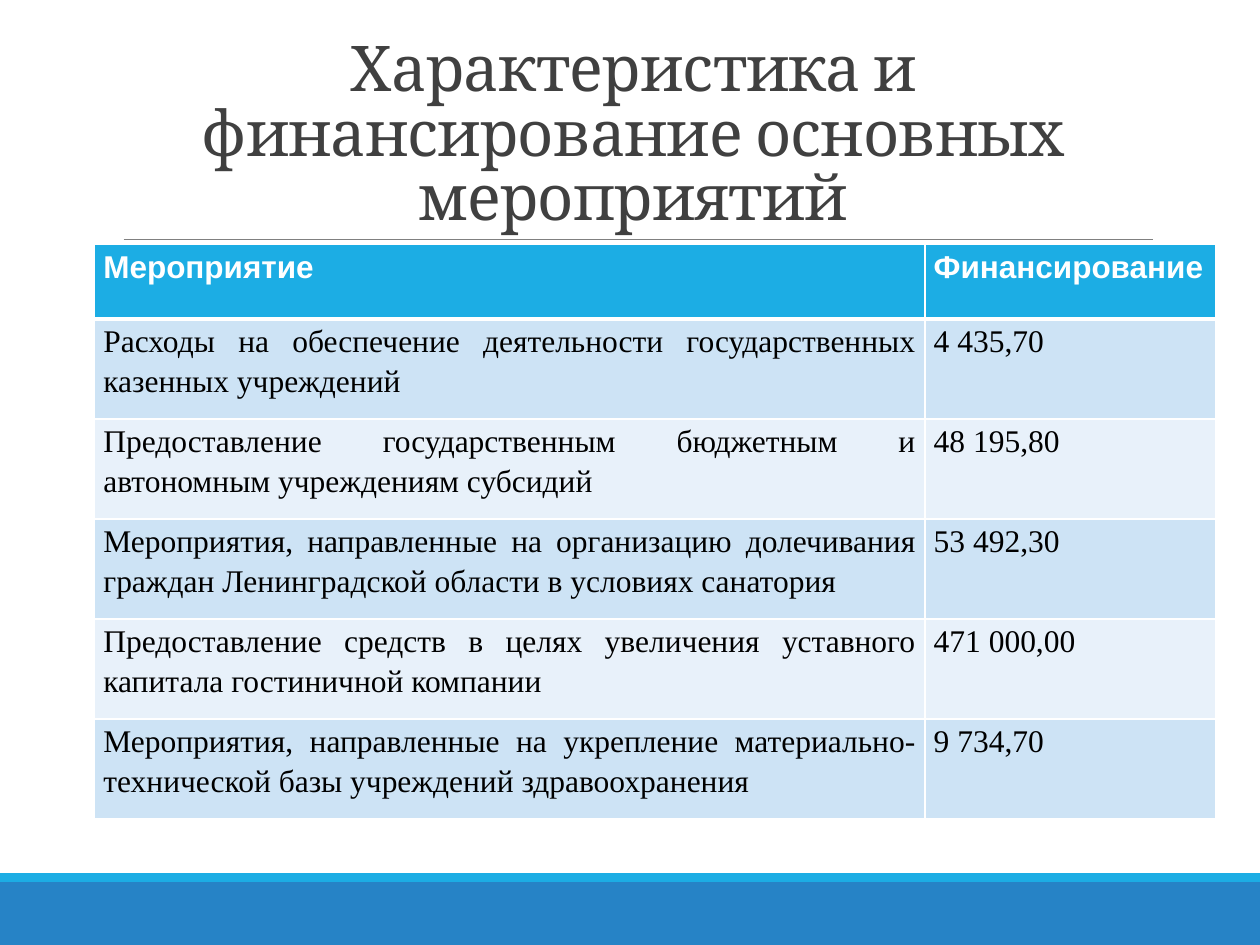
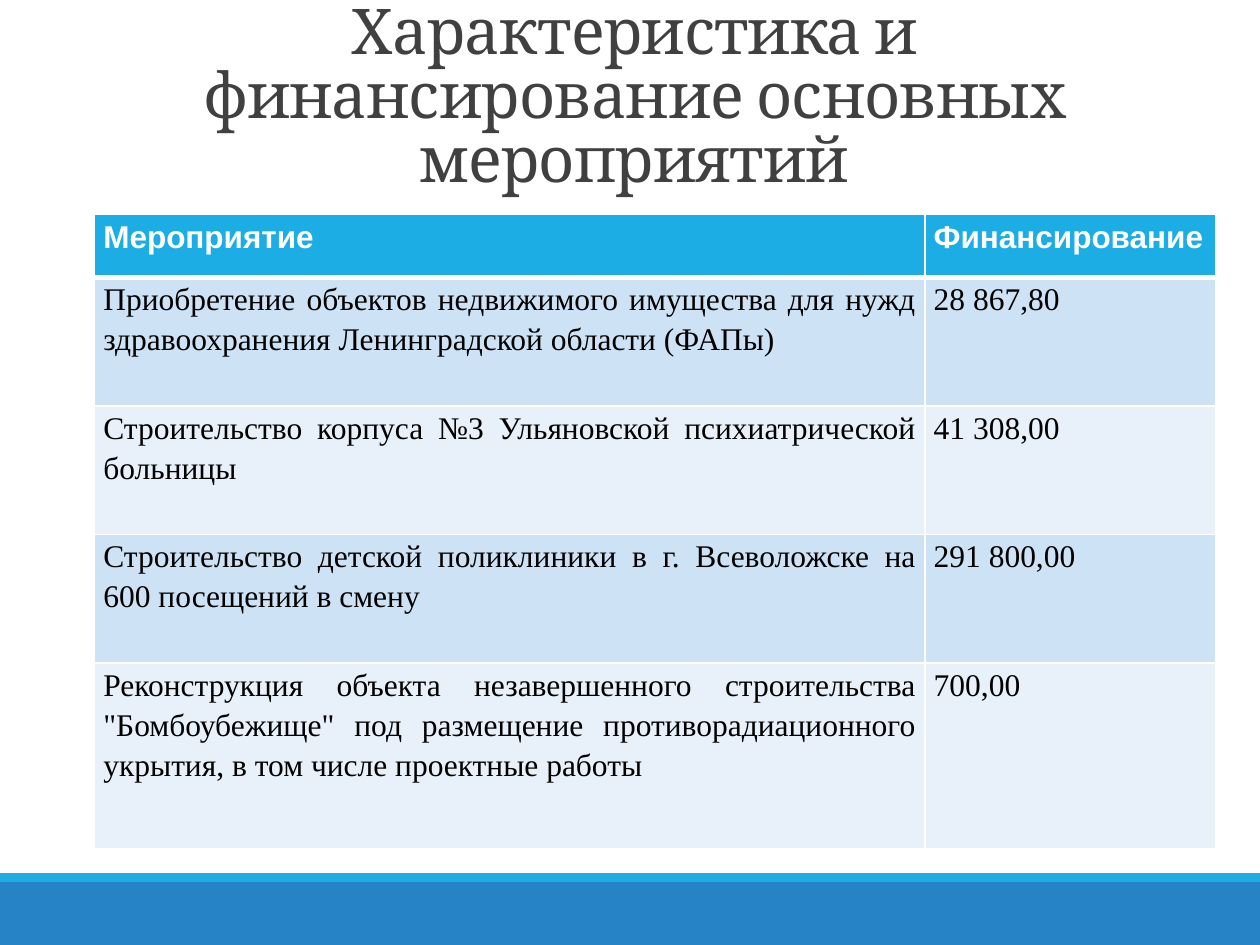
"""Build two slides with tables of main measures and their funding."""
import pptx
import pptx.dml.color
import pptx.enum.shapes
import pptx.enum.text
import pptx.oxml.ns
import pptx.util
from lxml import etree

Pt = pptx.util.Pt
qn = pptx.oxml.ns.qn
ALIGN = pptx.enum.text.PP_ALIGN

TITLE = "Характеристика и финансирование основных мероприятий"
HEADER = ("Мероприятие", "Финансирование")
SLIDES = [
    {
        "title_box": (64.8, 22.3, 594, 114.5),
        "table_top": 139.7,
        "row_heights": [42.5] + [57.2] * 5,
        "measures": [
            ("Расходы на обеспечение деятельности государственных казенных учреждений", "4 435,70"),
            ("Предоставление государственным бюджетным и автономным учреждениям субсидий", "48 195,80"),
            ("Мероприятия, направленные на организацию долечивания граждан "
             "Ленинградской области в условиях санатория", "53 492,30"),
            ("Предоставление средств в целях увеличения уставного капитала "
             "гостиничной компании", "471 000,00"),
            ("Мероприятия, направленные на укрепление материально-технической "
             "базы учреждений здравоохранения", "9 734,70"),
        ],
    },
    {
        "title_box": (65.5, 43.2, 594, 72),
        "table_top": 122.4,
        "row_heights": [36.1] + [73.5] * 3 + [106],
        "measures": [
            ("Приобретение объектов недвижимого имущества для нужд "
             "здравоохранения Ленинградской области (ФАПы)", "28 867,80"),
            ("Строительство корпуса №3 Ульяновской психиатрической больницы", "41 308,00"),
            ("Строительство детской поликлиники в г. Всеволожске на 600 посещений в смену", "291 800,00"),
            ("Реконструкция объекта незавершенного строительства \"Бомбоубежище\" под размещение "
             "противорадиационного укрытия, в том числе проектные работы", "700,00"),
        ],
    },
]

COLORS = {
    "band": "2683C6", "accent": "1CADE4", "rule": "808080", "title": "404040",
    "white": "FFFFFF", "black": "000000", "odd": "CDE3F5", "even": "E8F1FA",
}
WIDTH, HEIGHT = 720, 540
BANDS = [("band", 504, 36), ("accent", 499, 5)]
RULE_LEFT, RULE_RIGHT, RULE_Y = 70.6, 658.8, 136.8
TABLE_LEFT = 54
COLUMN_WIDTHS = [474.5, 166.3]
THIN, THICK = 1, 3


def color(name):
    return pptx.dml.color.RGBColor.from_string(COLORS[name])


def add_frame(page):
    for name, top, height in BANDS:
        band = page.shapes.add_shape(
            pptx.enum.shapes.MSO_SHAPE.RECTANGLE, 0, Pt(top), Pt(WIDTH), Pt(height))
        band.shadow.inherit = False
        band.fill.solid()
        band.fill.fore_color.rgb = color(name)
        band.line.fill.background()
    rule = page.shapes.add_connector(
        pptx.enum.shapes.MSO_CONNECTOR.STRAIGHT,
        Pt(RULE_LEFT), Pt(RULE_Y), Pt(RULE_RIGHT), Pt(RULE_Y))
    rule.line.color.rgb = color("rule")
    rule.line.width = Pt(0.5)
    etree.SubElement(rule._element.spPr, qn("a:effectLst"))


def add_title(page, place):
    box = page.shapes.add_textbox(*map(Pt, place))
    frame = box.text_frame
    frame.word_wrap = True
    frame.vertical_anchor = pptx.enum.text.MSO_ANCHOR.BOTTOM
    para = frame.paragraphs[0]
    para.alignment = ALIGN.CENTER
    para.line_spacing = 0.85
    para.font.name = "Cambria"
    para.font.size = Pt(36)
    para.font.color.rgb = color("title")
    span = para.add_run()
    span.text = TITLE
    span._r.get_or_add_rPr().set("spc", "-50")


def set_borders(cell, top, bottom):
    properties = cell._tc.get_or_add_tcPr()
    sides = {"lnL": THIN, "lnR": THIN, "lnT": top, "lnB": bottom}
    for position, (side, width) in enumerate(sides.items()):
        line = etree.Element(qn(f"a:{side}"), w=str(Pt(width)))
        fill = etree.SubElement(line, qn("a:solidFill"))
        etree.SubElement(fill, qn("a:srgbClr"), val=COLORS["white"])
        properties.insert(position, line)


def fill_cell(cell, text, row):
    is_header = row == 0
    cell.margin_left = cell.margin_right = Pt(5.1)
    cell.margin_top = cell.margin_bottom = 0
    cell.fill.solid()
    cell.fill.fore_color.rgb = color("accent" if is_header else "odd" if row % 2 else "even")
    set_borders(cell, THICK if row == 1 else THIN, THICK if is_header else THIN)
    cell.text = text
    para = cell.text_frame.paragraphs[0]
    para.alignment = ALIGN.JUSTIFY
    para.line_spacing = 1.15
    para.font.name = "Arial" if is_header else "Times New Roman"
    para.font.size = Pt(18)
    para.font.bold = is_header
    para.font.color.rgb = color("white" if is_header else "black")


def add_measures(page, top, heights, measures):
    rows = [HEADER] + measures
    table = page.shapes.add_table(
        len(rows), len(HEADER), Pt(TABLE_LEFT), Pt(top),
        Pt(sum(COLUMN_WIDTHS)), Pt(sum(heights))).table
    for column, width in zip(table.columns, COLUMN_WIDTHS):
        column.width = Pt(width)
    for row, (texts, height) in enumerate(zip(rows, heights)):
        table.rows[row].height = Pt(height)
        for column, text in enumerate(texts):
            fill_cell(table.cell(row, column), text, row)


def main():
    deck = pptx.Presentation()
    deck.slide_width, deck.slide_height = Pt(WIDTH), Pt(HEIGHT)
    for content in SLIDES:
        page = deck.slides.add_slide(deck.slide_layouts[6])
        add_frame(page)
        add_title(page, content["title_box"])
        add_measures(page, content["table_top"], content["row_heights"], content["measures"])
    deck.save("out.pptx")


if __name__ == "__main__":
    main()
